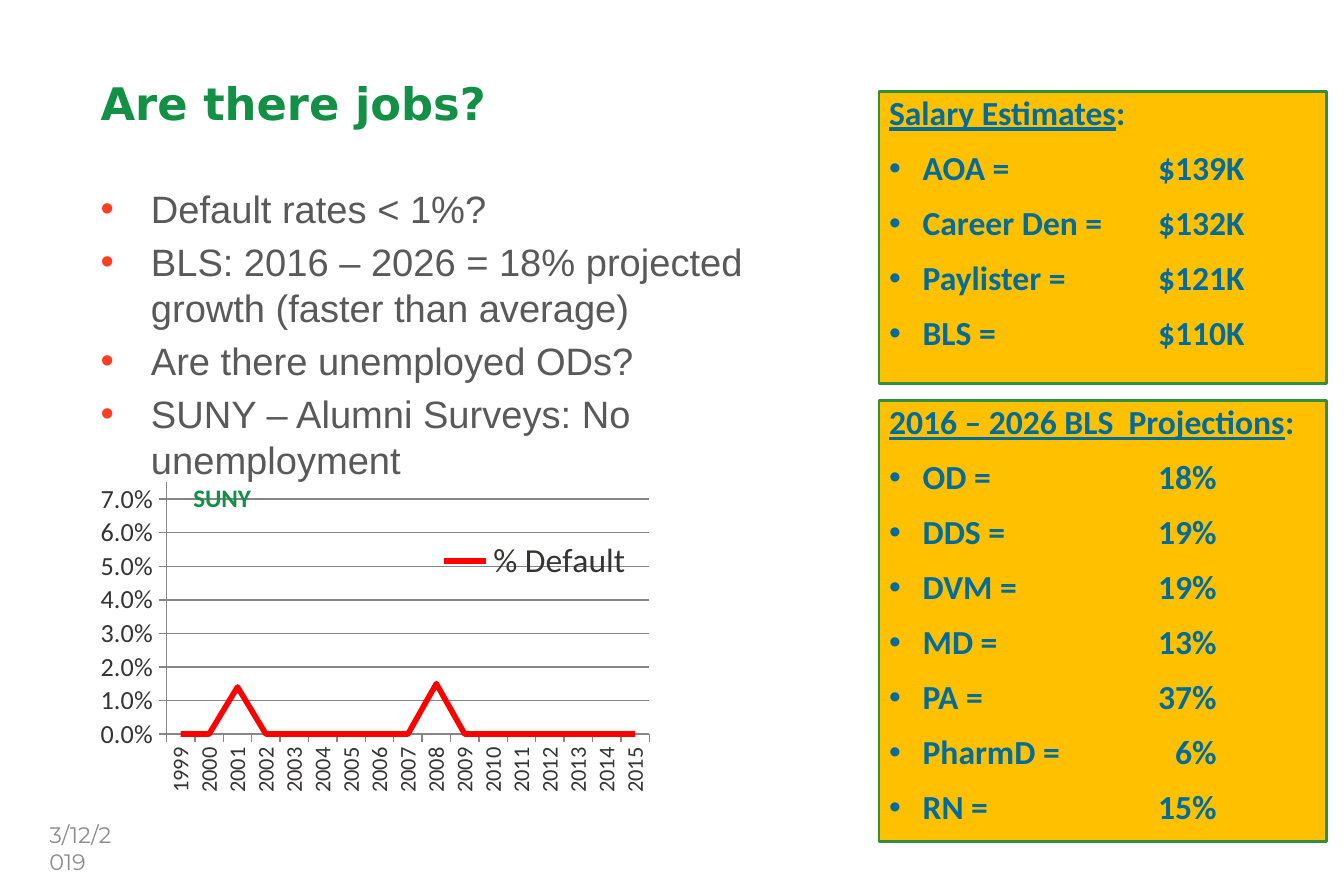
import pptx
import pptx.util
import pptx.dml.color
import pptx.chart.data
import pptx.enum.chart
import pptx.enum.shapes
import pptx.enum.text
import pptx.oxml
import pptx.oxml.ns

Pt = pptx.util.Pt
PP = pptx.enum.text.PP_ALIGN
ANCHOR = pptx.enum.text.MSO_ANCHOR
XL = pptx.enum.chart
NS = pptx.oxml.ns.nsdecls("a", "c")


class Theme:
    green, edge, gold, blue = "129045", "2F9040", "FFC000", "006C9C"
    gray, pale, dark, grid = "595959", "8C8C8C", "363333", "868686"
    red, dot = "FF0000", "FC3F23"
    title, body, panel, date, tag = 24, 20.4, 18, 12, 13.5
    key, value, year = 18, 14, 12
    head, text, sans, foot = "DejaVu Sans", "Arial", "Calibri", "Montserrat"


def rgb(code):
    return pptx.dml.color.RGBColor.from_string(code)


def style(font, face, size, color, bold=False):
    font.name, font.size, font.bold = face, Pt(size), bold
    font.color.rgb = rgb(color)


def setup(frame, inset=(7.2, 3.6), anchor=ANCHOR.TOP, wrap=True):
    frame.word_wrap, frame.vertical_anchor = wrap, anchor
    frame.margin_left = frame.margin_right = Pt(inset[0])
    frame.margin_top = frame.margin_bottom = Pt(inset[1])


def write(frame, text, face, size, color, bold=False, under=None, first=False,
          line=None, before=0, indent=0, dot=None, tab=None):
    """Add one paragraph; `under` is a leading part to underline."""
    para = frame.paragraphs[0] if first else frame.add_paragraph()
    para.alignment = PP.LEFT
    if line:
        para.line_spacing = line
    para.space_before = Pt(0 if first else before)
    props = para._p.get_or_add_pPr()
    if indent:
        props.set("marL", str(Pt(indent)))
        props.set("indent", str(Pt(-indent)))
        marks = [f'<a:buClr {NS}><a:srgbClr val="{dot}"/></a:buClr>',
                 f'<a:buFont {NS} typeface="Arial"/>',
                 f'<a:buChar {NS} char="•"/>']
        if tab:
            marks.append(f'<a:tabLst {NS}><a:tab pos="{Pt(tab)}" '
                         'algn="r"/></a:tabLst>')
        for mark in marks:
            props.append(pptx.oxml.parse_xml(mark))
    for part, mark in ((under, True), (text, False)):
        if part:
            run = para.add_run()
            run.text = part
            style(run.font, face, size, color, bold)
            run.font.underline = mark


def label(slide, box, text, face, size, color, bold=False, line=None, **kind):
    frame = slide.shapes.add_textbox(*map(Pt, box)).text_frame
    setup(frame, **kind)
    write(frame, text, face, size, color, bold, first=True, line=line)


def points(slide, box, items):
    frame = slide.shapes.add_textbox(*map(Pt, box)).text_frame
    setup(frame)
    for i, item in enumerate(items):
        write(frame, item, Theme.text, Theme.body, Theme.gray, first=i == 0,
              before=4, indent=27, dot=Theme.dot)


def panel(slide, box, head, rows, tab):
    rect = pptx.enum.shapes.MSO_SHAPE.RECTANGLE
    shape = slide.shapes.add_shape(rect, *map(Pt, box))
    shape.shadow.inherit = False
    shape.fill.solid()
    shape.fill.fore_color.rgb = rgb(Theme.gold)
    shape.line.color.rgb = rgb(Theme.edge)
    shape.line.width = Pt(1.5)
    frame = shape.text_frame
    setup(frame, inset=(5.4, 2.7))
    look = dict(face=Theme.sans, size=Theme.panel, color=Theme.blue,
                bold=True, line=0.9, before=10)
    write(frame, ":", under=head, first=True, **look)
    for name, value in rows:
        write(frame, f"{name} =\t{value}", indent=18, dot=Theme.blue,
              tab=tab, **look)


def place(parent, after, x, y, w, h, inner=False):
    """Give a chart part a fixed layout, in shares of the chart."""
    for old in parent.findall(pptx.oxml.ns.qn("c:layout")):
        parent.remove(old)
    target = '<c:layoutTarget val="inner"/>' if inner else ""
    parent.insert(after, pptx.oxml.parse_xml(
        f'<c:layout {NS}><c:manualLayout>{target}<c:xMode val="edge"/>'
        f'<c:yMode val="edge"/><c:x val="{x}"/><c:y val="{y}"/>'
        f'<c:w val="{w}"/><c:h val="{h}"/></c:manualLayout></c:layout>'))


def graph(slide, box, peaks):
    years = range(1999, 2016)
    data = pptx.chart.data.CategoryChartData(number_format="0.0%")
    data.categories = [str(year) for year in years]
    data.add_series("% Default", [peaks.get(year, 0) for year in years])
    chart = slide.shapes.add_chart(XL.XL_CHART_TYPE.LINE, *map(Pt, box),
                                   data).chart
    chart.has_title = False
    style(chart.font, Theme.sans, Theme.key, Theme.dark)

    # Line
    chart.plots[0].vary_by_categories = False
    line = chart.plots[0].series[0]
    line.smooth = False
    line.marker.style = XL.XL_MARKER_STYLE.NONE
    line.format.line.color.rgb = rgb(Theme.red)
    line.format.line.width = Pt(3)

    # Axes
    cat, val = chart.category_axis, chart.value_axis
    val.minimum_scale, val.maximum_scale, val.major_unit = 0, 0.075, 0.01
    val.has_major_gridlines = True
    val.tick_labels.number_format = "0.0%"
    val.tick_labels.number_format_is_linked = False
    for axis, size in ((cat, Theme.year), (val, Theme.value)):
        axis.major_tick_mark = XL.XL_TICK_MARK.OUTSIDE
        style(axis.tick_labels.font, Theme.sans, size, Theme.dark)
    for stroke in (cat.format.line, val.format.line,
                   val.major_gridlines.format.line):
        stroke.color.rgb = rgb(Theme.grid)
        stroke.width = Pt(0.75)
    turn = cat._element.find(".//" + pptx.oxml.ns.qn("a:bodyPr"))
    turn.set("rot", "-5400000")
    turn.set("vert", "horz")

    # Legend inside the plot
    chart.has_legend = True
    key = chart.legend
    key.position = XL.XL_LEGEND_POSITION.RIGHT
    key.include_in_layout = True
    style(key.font, Theme.sans, Theme.key, Theme.dark)
    place(key._element, 1, 0.44, 0.2, 0.25, 0.11)
    place(chart._chartSpace.chart.plotArea, 0, 0.1, 0.02, 0.61, 0.78,
          inner=True)


def main():
    deck = pptx.Presentation()
    deck.slide_width, deck.slide_height = Pt(720), Pt(468)
    slide = deck.slides.add_slide(deck.slide_layouts[6])

    # Date, title and main points
    label(slide, (19.4, 436.3, 54.7, 21.6), "3/12/2019", Theme.foot,
          Theme.date, Theme.pale)
    label(slide, (46.8, 33.1, 574.6, 39.6), "Are there jobs?", Theme.head,
          Theme.title, Theme.green, bold=True, line=0.8,
          anchor=ANCHOR.BOTTOM)
    points(slide, (46.8, 95.8, 415.4, 141.1), [
        "Default rates < 1%?",
        "BLS: 2016 – 2026 = 18% projected growth (faster than average)",
        "Are there unemployed ODs?",
        "SUNY – Alumni Surveys: No unemployment"])

    # Default rate chart
    graph(slide, (46.8, 254.9, 424.1, 172.8), {2001: 0.014, 2008: 0.015})
    label(slide, (96.5, 254.9, 46.1, 23.8), "SUNY", Theme.sans, Theme.tag,
          Theme.green, bold=True, wrap=False)

    # Panels on the right
    left, wide = 470.9, 239.8
    panel(slide, (left, 214.6, wide, 236.2), "2016 – 2026 BLS  Projections", [
        ("OD", "18%"), ("DDS", "19%"), ("DVM", "19%"), ("MD", "13%"),
        ("PA", "37%"), ("PharmD", "6%"), ("RN", "15%")], tab=175.5)
    panel(slide, (left, 49, wide, 156.2), "Salary Estimates", [
        ("AOA", "$139K"), ("Career Den", "$132K"), ("Paylister", "$121K"),
        ("BLS", "$110K")], tab=190.5)

    deck.save("out.pptx")


if __name__ == "__main__":
    main()
